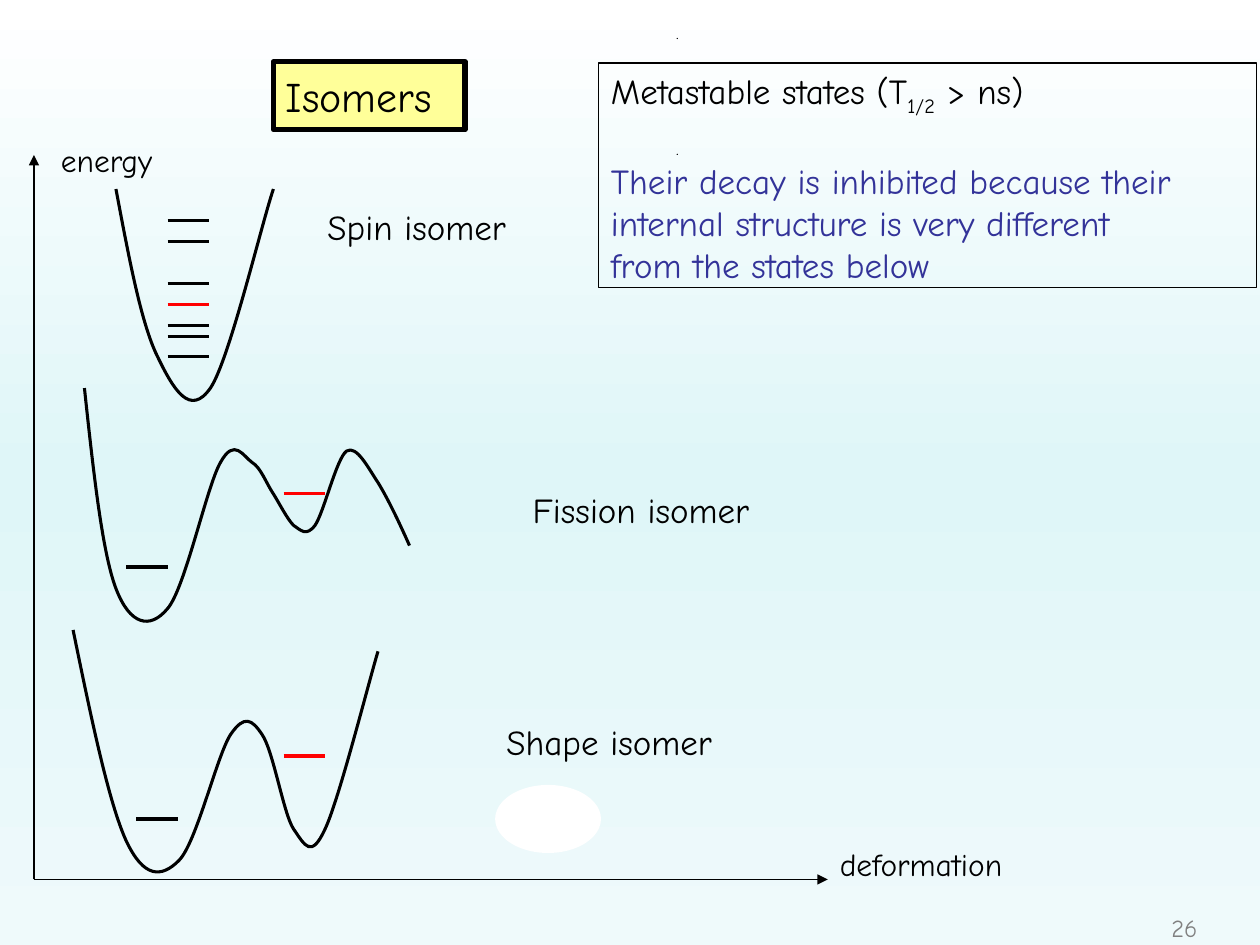
from collections import namedtuple
from copy import deepcopy

from lxml import etree
from pptx import Presentation
from pptx.dml.color import RGBColor
from pptx.enum.shapes import MSO_CONNECTOR, MSO_SHAPE
from pptx.enum.text import MSO_ANCHOR, PP_ALIGN
from pptx.oxml.ns import qn
from pptx.util import Inches, Pt

STRAIGHT = MSO_CONNECTOR.STRAIGHT
RECT, OVAL = MSO_SHAPE.RECTANGLE, MSO_SHAPE.OVAL
TOP, MIDDLE = MSO_ANCHOR.TOP, MSO_ANCHOR.MIDDLE
LEFT, CENTER = PP_ALIGN.LEFT, PP_ALIGN.CENTER

Theme = namedtuple("Theme", "font black white red blue yellow grey sky title body axis number")
theme = Theme(
    "Comic Neue",
    *(RGBColor.from_string(c) for c in ("000000", "FFFFFF", "FF0000", "333399", "FFFF99", "808080")),
    sky=[(0, "FFFFFF"), (0.5, "DFF6F8"), (1, "EFFAFB")],
    title=Pt(24), body=Pt(20), axis=Pt(18), number=Pt(14),
)


def write(p, text, size, color=theme.black, align=LEFT):
    p.text = text
    p.alignment = align
    p.font.name = theme.font
    p.font.size = size
    p.font.color.rgb = color


def draw_line(x1, y1, x2, y2, color, width):
    line = s.shapes.add_connector(STRAIGHT, Inches(x1), Inches(y1), Inches(x2), Inches(y2))
    line.line.color.rgb = color
    line.line.width = Pt(width)
    etree.SubElement(line._element.spPr, qn("a:effectLst"))
    return line


prs = Presentation()
prs.slide_width, prs.slide_height = Inches(10), Inches(7.5)
s = prs.slides.add_slide(prs.slide_layouts[6])

fill = s.background.fill
fill.gradient()
fill.gradient_angle = 270
stops = s.element.find(".//" + qn("a:gsLst"))
stops.append(deepcopy(stops[0]))
for stop, (position, color) in zip(fill.gradient_stops, theme.sky):
    stop.position = position
    stop.color.rgb = RGBColor.from_string(color)

ovals = [
    (5.37, 0.3, 0.01, 0.01, theme.black),
    (5.37, 1.22, 0.01, 0.01, theme.black),
    (3.93, 6.23, 0.84, 0.54, theme.white),
]
for *box, color in ovals:
    sp = s.shapes.add_shape(OVAL, *map(Inches, box))
    sp.shadow.inherit = False
    sp.fill.solid()
    sp.fill.fore_color.rgb = color
    sp.line.fill.background()

definition = s.shapes.add_shape(RECT, Inches(4.75), Inches(0.5), Inches(5.22), Inches(1.78))
definition.fill.background()
definition.line.width = Pt(0.75)
title = s.shapes.add_shape(RECT, Inches(2.17), Inches(0.49), Inches(1.52), Inches(0.54))
title.fill.solid()
title.fill.fore_color.rgb = theme.yellow
title.line.width = Pt(3)
for sp, anchor in ((definition, TOP), (title, MIDDLE)):
    sp.shadow.inherit = False
    sp.line.color.rgb = theme.black
    sp.text_frame.word_wrap = True
    sp.text_frame.vertical_anchor = anchor
write(title.text_frame.paragraphs[0], "Isomers", theme.title)

tf = definition.text_frame
p = tf.paragraphs[0]
write(p, "Metastable states (T", theme.body)
for text, baseline in (("1/2", "-25000"), (" > ns)", "0")):
    r = p.add_run()
    r.text = text
    r.font._element.set("baseline", baseline)
reasons = [
    "Their decay is inhibited because their",
    "internal structure is very different",
    "from the states below",
]
for i, text in enumerate(reasons):
    p = tf.add_paragraph()
    write(p, text, theme.body, theme.blue)
    p.space_before = Pt(0 if i else 24)

wells = [
    [(0.92, 1.5), (1.02, 2.03), (1.12, 2.57), (1.25, 2.83), (1.38, 3.1), (1.51, 3.31),
     (1.67, 3.08), (1.82, 2.86), (2.08, 1.76), (2.17, 1.5)],
    [(0.67, 3.08), (0.74, 3.73), (0.81, 4.38), (0.92, 4.67), (1.03, 4.96), (1.19, 5),
     (1.33, 4.83), (1.47, 4.67), (1.64, 3.86), (1.75, 3.67), (1.86, 3.47), (1.93, 3.62),
     (2, 3.67), (2.07, 3.71), (2.11, 3.83), (2.17, 3.92), (2.22, 4), (2.28, 4.12),
     (2.33, 4.17), (2.39, 4.21), (2.43, 4.26), (2.5, 4.17), (2.57, 4.07), (2.67, 3.64),
     (2.75, 3.58), (2.83, 3.53), (2.92, 3.71), (3, 3.83), (3.08, 3.96), (3.17, 4.15),
     (3.25, 4.33)],
    [(0.58, 5), (0.72, 5.68), (0.86, 6.36), (1, 6.67), (1.14, 6.97), (1.28, 6.97),
     (1.42, 6.83), (1.56, 6.69), (1.72, 6), (1.83, 5.83), (1.94, 5.67), (2, 5.71),
     (2.08, 5.83), (2.17, 5.96), (2.25, 6.46), (2.33, 6.58), (2.42, 6.71), (2.47, 6.82),
     (2.58, 6.58), (2.69, 6.35), (2.93, 5.4), (3, 5.17)],
]
for points in wells:
    start, *rest = [(Inches(x), Inches(y)) for x, y in points]
    builder = s.shapes.build_freeform(*start)
    builder.add_line_segments(rest, close=False)
    well = builder.convert_to_shape()
    well.shadow.inherit = False
    well.fill.background()
    well.line.color.rgb = theme.black
    well.line.width = Pt(1.75)
    outline = well._element.find(".//" + qn("a:pathLst"))[0]
    segments = outline.findall(qn("a:lnTo"))
    for i in range(0, len(segments), 3):
        curve = etree.SubElement(outline, qn("a:cubicBezTo"))
        for segment in segments[i:i + 3]:
            curve.append(segment[0])
            outline.remove(segment)

levels = [(1.33, y, theme.black) for y in (1.75, 1.92, 2.25, 2.58, 2.67, 2.83)]
levels += [
    (1.33, 2.42, theme.red),
    (1, 4.5, theme.black),
    (2.25, 3.92, theme.red),
    (1.08, 6.5, theme.black),
    (2.25, 6, theme.red),
]
for x, y, color in levels:
    draw_line(x, y, x + 0.33, y, color, 1.75)

for x, y in ((0.27, 1.23), (6.57, 6.98)):
    axis = draw_line(0.27, 6.98, x, y, theme.black, 0.75)
    etree.SubElement(axis.line._get_or_add_ln(), qn("a:tailEnd"), type="triangle")

labels = [
    ("Spin isomer", 2.5, 1.58, 1.71, 0.43, theme.body, theme.black, LEFT),
    ("Fission isomer", 4.13, 3.83, 2.03, 0.43, theme.body, theme.black, LEFT),
    ("Shape isomer", 3.92, 5.67, 1.94, 0.43, theme.body, theme.black, LEFT),
    ("energy", 0.35, 1.07, 0.99, 0.4, theme.axis, theme.black, CENTER),
    ("deformation", 6.49, 6.66, 1.64, 0.4, theme.axis, theme.black, CENTER),
    ("26", 9.16, 7.2, 0.48, 0.33, theme.number, theme.grey, CENTER),
]
for text, *box, size, color, align in labels:
    tf = s.shapes.add_textbox(*map(Inches, box)).text_frame
    tf.word_wrap = True
    write(tf.paragraphs[0], text, size, color, align)

prs.save("out.pptx")
